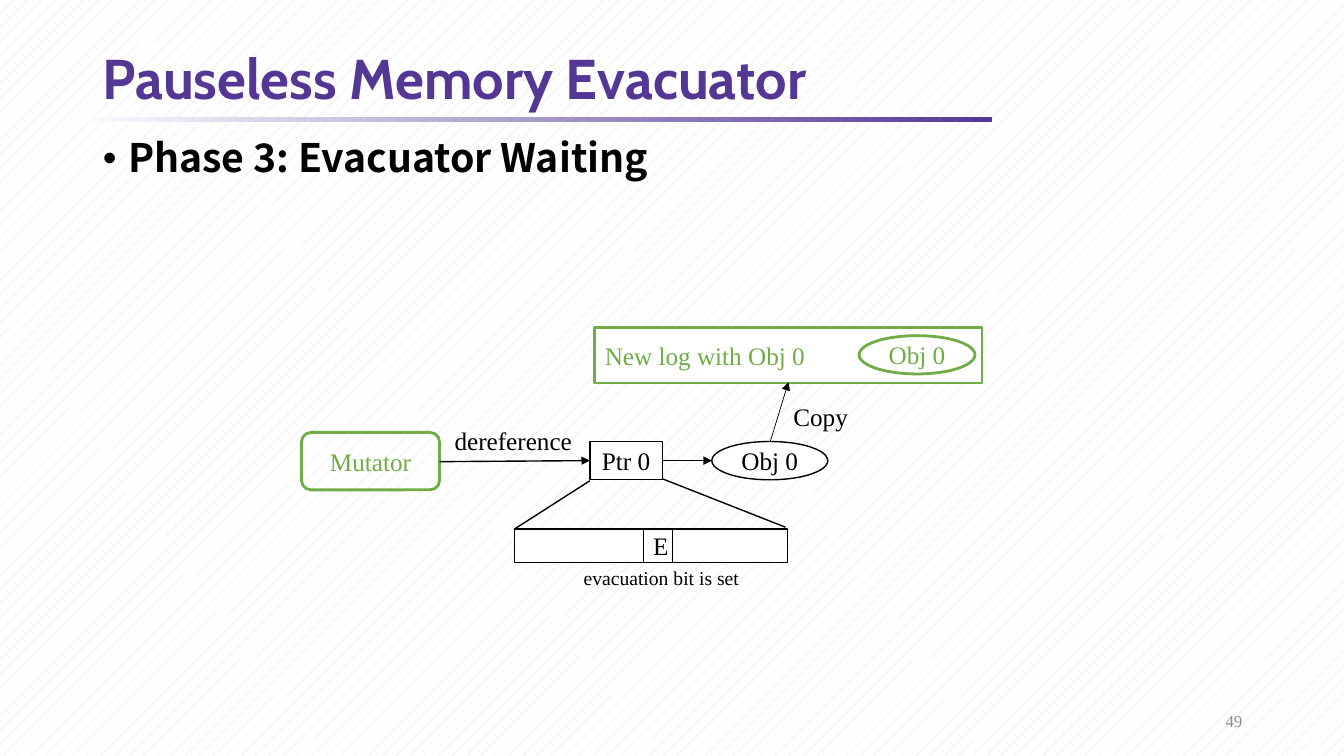
import pptx
import pptx.dml.color
import pptx.enum.dml
import pptx.enum.shapes
import pptx.enum.text
import pptx.oxml.ns
import pptx.util
from lxml import etree
from pptx.util import Inches

SHAPE = pptx.enum.shapes.MSO_SHAPE
ALIGN = pptx.enum.text.PP_ALIGN
ANCHOR = pptx.enum.text.MSO_ANCHOR
AUTO_SIZE = pptx.enum.text.MSO_AUTO_SIZE
qn = pptx.oxml.ns.qn

PURPLE, GREEN, BLACK, WHITE, GRAY = "543795", "70AD47", "000000", "FFFFFF", "8C8C8C"
DIAGRAM_FONT = "Times New Roman"


def rgb(hex_code):
    return pptx.dml.color.RGBColor.from_string(hex_code)


def place(item, left, top, width, height):
    item.left, item.top = Inches(left), Inches(top)
    item.width, item.height = Inches(width), Inches(height)


def write(paragraph, text, size, color, font=DIAGRAM_FONT, bold=False, align=ALIGN.LEFT):
    paragraph.text = text
    paragraph.alignment = align
    paragraph.font.size = pptx.util.Pt(size)
    paragraph.font.name = font
    paragraph.font.bold = bold
    paragraph.font.color.rgb = rgb(color)
    # East Asian typeface, so that the heading font applies to every script
    run_defaults = paragraph.font._element
    latin = run_defaults.find(qn("a:latin"))
    east_asian = etree.Element(qn("a:ea"), typeface=font)
    latin.addnext(east_asian)


def set_background(slide):
    fill = slide.background.fill
    fill.patterned()
    fill.pattern = pptx.enum.dml.MSO_PATTERN.PERCENT_5
    fill.fore_color.rgb = rgb("D9D9D9")
    fill.back_color.rgb = rgb(WHITE)


def add_title_rule(slide):
    rule = slide.shapes.add_shape(
        SHAPE.RECTANGLE, Inches(0.92), Inches(1.16), Inches(8.92), Inches(0.05))
    rule.shadow.inherit = False
    rule.line.fill.background()
    rule.fill.gradient()
    rule.fill.gradient_angle = 0
    for stop, color in zip(rule.fill.gradient_stops, ("F7FAFD", PURPLE)):
        stop.color.rgb = rgb(color)


def fill_title(title, text):
    place(title, 0.92, 0.43, 11.5, 0.75)
    frame = title.text_frame
    frame.auto_size = AUTO_SIZE.NONE
    frame.vertical_anchor = ANCHOR.MIDDLE
    heading = frame.paragraphs[0]
    heading.line_spacing = 0.9
    write(heading, text, 40, PURPLE, "Cabin", True)


def fill_body(body, text):
    place(body, 0.92, 1.33, 11.57, 2.18)
    body.text_frame.auto_size = AUTO_SIZE.NONE
    phase = body.text_frame.paragraphs[0]
    phase.line_spacing = 0.9
    phase.space_before = pptx.util.Pt(0)
    properties = phase._p.get_or_add_pPr()
    properties.set("marL", str(Inches(0.25)))
    properties.set("indent", str(Inches(-0.25)))
    etree.SubElement(properties, qn("a:buFont"), typeface="Arial")
    etree.SubElement(properties, qn("a:buChar"), char="•")
    write(phase, text, 28, BLACK, "Noto Sans CJK SC", True)


def add_node(slide, kind, box, text="", color=BLACK, width=1, filled=True,
             align=ALIGN.CENTER):
    """Outlined diagram shape, with its outline and text in one colour."""
    node = slide.shapes.add_shape(kind, *map(Inches, box))
    node.shadow.inherit = False
    if filled:
        node.fill.solid()
        node.fill.fore_color.rgb = rgb(WHITE)
    else:
        node.fill.background()
    node.line.color.rgb = rgb(color)
    node.line.width = pptx.util.Pt(width)
    if text:
        node.text_frame.vertical_anchor = ANCHOR.MIDDLE
        write(node.text_frame.paragraphs[0], text, 18, color, align=align)


def add_label(slide, box, text, size=18):
    label = slide.shapes.add_textbox(*map(Inches, box))
    label.text_frame.word_wrap = False
    label.text_frame.auto_size = AUTO_SIZE.SHAPE_TO_FIT_TEXT
    write(label.text_frame.paragraphs[0], text, size, BLACK)


def add_page_number(slide, number):
    page = slide.shapes.add_textbox(Inches(9.42), Inches(6.95), Inches(3), Inches(0.4))
    page.text_frame.word_wrap = True
    page.text_frame.vertical_anchor = ANCHOR.MIDDLE
    write(page.text_frame.paragraphs[0], number, 12, GRAY, align=ALIGN.RIGHT)


def add_link(slide, start, end, width=1, arrow=False):
    link = slide.shapes.add_connector(
        pptx.enum.shapes.MSO_CONNECTOR.STRAIGHT, *map(Inches, start + end))
    link.line.color.rgb = rgb(BLACK)
    link.line.width = pptx.util.Pt(width)
    if arrow:
        etree.SubElement(link.line._get_or_add_ln(), qn("a:tailEnd"), type="triangle")
    etree.SubElement(link._element.spPr, qn("a:effectLst"))


def add_pointer_diagram(slide):
    add_node(slide, SHAPE.OVAL, (7.06, 4.38, 1.15, 0.38), "Obj 0")
    add_node(slide, SHAPE.ROUNDED_RECTANGLE, (2.99, 4.29, 1.37, 0.57), "Mutator",
             GREEN, 2, filled=False)
    add_link(slide, (4.36, 4.58), (5.85, 4.57), arrow=True)
    add_label(slide, (4.41, 4.17, 1.38, 0.4), "dereference")
    add_node(slide, SHAPE.RECTANGLE, (5.85, 4.38, 0.72, 0.38), "Ptr 0")
    add_link(slide, (6.57, 4.57), (7.06, 4.57), arrow=True)


def add_evacuation_bits(slide):
    add_node(slide, SHAPE.RECTANGLE, (5.1, 5.25, 2.71, 0.33))
    add_node(slide, SHAPE.RECTANGLE, (6.38, 5.25, 0.29, 0.33), "E")
    add_label(slide, (5.69, 5.57, 1.76, 0.34), "evacuation bit is set", 14)
    add_link(slide, (5.85, 4.77), (5.1, 5.25))
    add_link(slide, (6.57, 4.75), (7.79, 5.23))


def add_new_log(slide):
    add_node(slide, SHAPE.RECTANGLE, (5.9, 3.25, 3.84, 0.55), "New log with Obj 0",
             GREEN, 2, align=ALIGN.LEFT)
    add_node(slide, SHAPE.OVAL, (8.52, 3.33, 1.15, 0.38), "Obj 0", GREEN, 2, filled=False)
    add_link(slide, (7.64, 4.38), (7.82, 3.79), 0.5, arrow=True)
    add_label(slide, (7.77, 3.93, 0.75, 0.4), "Copy")


def main():
    deck = pptx.Presentation()
    deck.slide_width, deck.slide_height = Inches(13.33), Inches(7.5)
    slide = deck.slides.add_slide(deck.slide_layouts[1])
    set_background(slide)
    add_title_rule(slide)
    add_page_number(slide, "49")
    fill_title(slide.shapes.title, "Pauseless Memory Evacuator")
    fill_body(slide.placeholders[1], "Phase 3: Evacuator Waiting")
    add_pointer_diagram(slide)
    add_evacuation_bits(slide)
    add_new_log(slide)
    deck.save("out.pptx")


if __name__ == "__main__":
    main()
